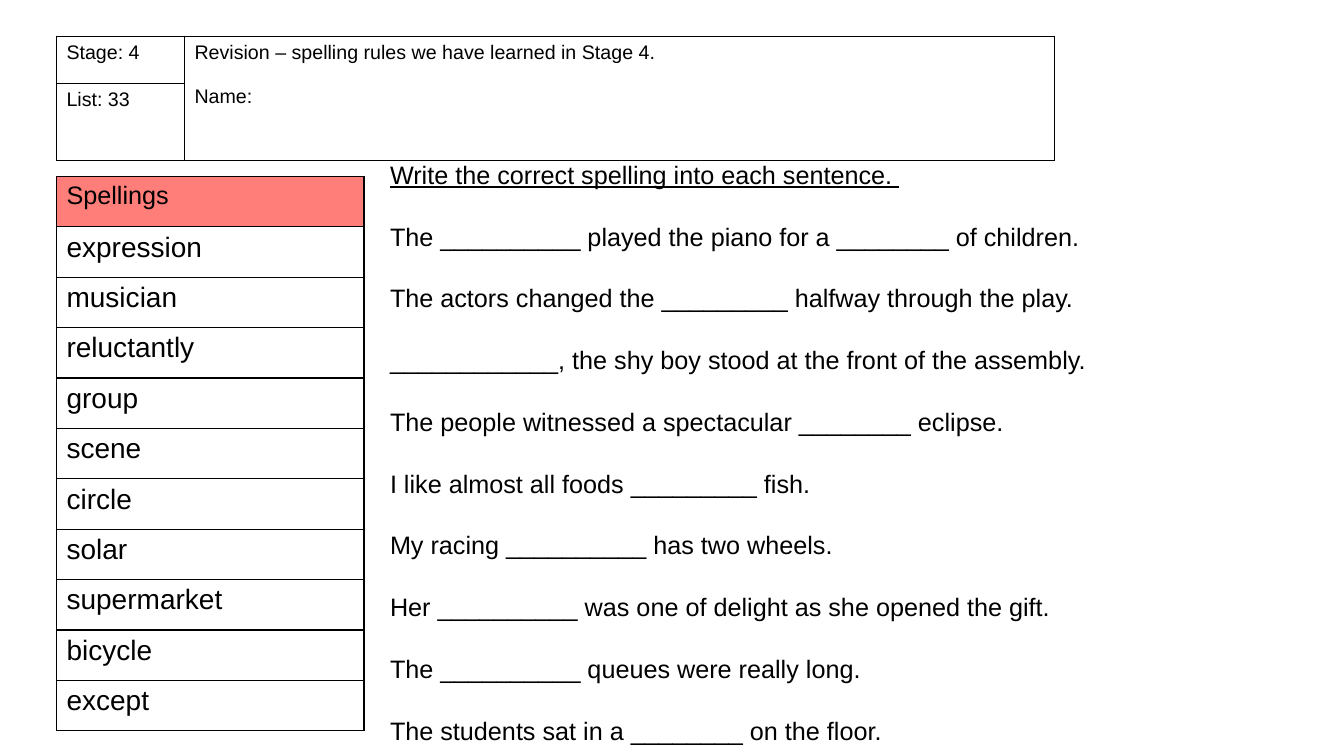
"""Build a spelling revision worksheet slide."""
from lxml.etree import SubElement
from pptx import Presentation
from pptx.dml.color import RGBColor
from pptx.oxml.ns import qn
from pptx.util import Inches, Pt

COLOURS = {"ink": "000000", "heading": "FF7E79"}
LEFT = 0.56
ROW = 0.5
WORDS = ["expression", "musician", "reluctantly", "group", "scene", "circle",
         "solar", "supermarket", "bicycle", "except"]
SENTENCES = [
    "The __________ played the piano for a ________ of children.",
    "The actors changed the _________ halfway through the play.",
    "____________, the shy boy stood at the front of the assembly.",
    "The people witnessed a spectacular ________ eclipse.",
    "I like almost all foods _________ fish.",
    "My racing __________ has two wheels.",
    "Her __________ was one of delight as she opened the gift.",
    "The __________ queues were really long.",
    "The students sat in a ________ on the floor.",
]


def style_text(paragraph, size):
    for run in paragraph.runs:
        run.font.name = "Arial"
        run.font.size = Pt(size)
        run.font.color.rgb = RGBColor.from_string(COLOURS["ink"])


def add_grid(top, widths, heights):
    grid = slide.shapes.add_table(
        len(heights), len(widths), Inches(LEFT), Inches(top),
        Inches(sum(widths)), Inches(sum(heights))).table
    grid.first_row = grid.horz_banding = False
    for column, width in zip(grid.columns, widths):
        column.width = Inches(width)
    for row, height in zip(grid.rows, heights):
        row.height = Inches(height)
        for cell in row.cells:
            properties = cell._tc.get_or_add_tcPr()
            for side in ("lnL", "lnR", "lnT", "lnB"):
                border = SubElement(properties, qn(f"a:{side}"), w=str(Pt(1)))
                paint = SubElement(border, qn("a:solidFill"))
                SubElement(paint, qn("a:srgbClr"), val=COLOURS["ink"])
            cell.fill.background()
    return grid


deck = Presentation()
deck.slide_width, deck.slide_height = Inches(13.33), Inches(7.5)
slide = deck.slides.add_slide(deck.slide_layouts[6])

spellings = add_grid(1.75, [3.05], [ROW] * (len(WORDS) + 1))
for index, word in enumerate(["Spellings"] + WORDS):
    entry = spellings.cell(index, 0)
    entry.text_frame.text = word
    style_text(entry.text_frame.paragraphs[0], 20 if index else 18)
spellings.cell(0, 0).fill.solid()
spellings.cell(0, 0).fill.fore_color.rgb = RGBColor.from_string(COLOURS["heading"])

details = add_grid(0.36, [1.27, 8.63], [0.47, 0.76])
details.cell(0, 1).merge(details.cell(1, 1))
for row, column, wording in [
    (0, 0, "Stage: 4"),
    (1, 0, "List: 33"),
    (0, 1, "Revision – spelling rules we have learned in Stage 4.\nName:"),
]:
    detail = details.cell(row, column).text_frame
    detail.text = wording
    for paragraph in detail.paragraphs:
        style_text(paragraph, 14)
    for paragraph in detail.paragraphs[1:]:
        paragraph.space_before = Pt(16)

exercise = slide.shapes.add_textbox(
    Inches(3.77), Inches(1.53), Inches(9.56), Inches(5.97)).text_frame
exercise.word_wrap = True
exercise.text = "\n".join(["Write the correct spelling into each sentence. "] + SENTENCES)
for paragraph in exercise.paragraphs:
    style_text(paragraph, 18)
for paragraph in exercise.paragraphs[1:]:
    paragraph.space_before = Pt(22.5)
exercise.paragraphs[0].runs[0].font.underline = True

deck.save("out.pptx")
